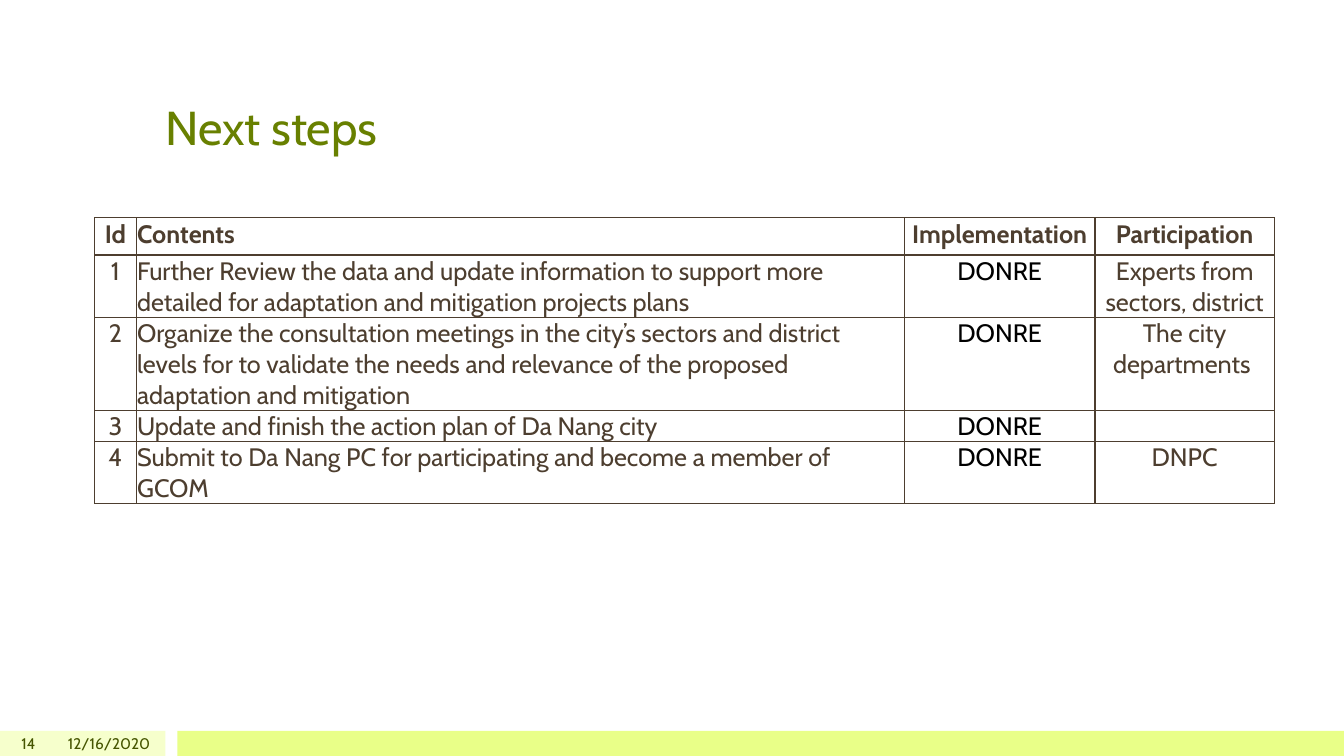
from lxml import etree
from pptx import Presentation
from pptx.dml.color import RGBColor
from pptx.enum.shapes import MSO_SHAPE
from pptx.enum.text import MSO_ANCHOR as Anchor, PP_ALIGN as Align
from pptx.oxml.ns import qn
from pptx.util import Inches, Pt

GREEN = RGBColor(0x68, 0x80, 0x00)
DARK_GREEN = RGBColor(0x45, 0x55, 0x00)
PALE_LIME = RGBColor(0xF6, 0xFF, 0xCC)
LIME = RGBColor(0xE9, 0xFF, 0x88)
BROWN = RGBColor(0x4D, 0x3E, 0x2F)
BLACK = RGBColor(0x00, 0x00, 0x00)


def write(frame, text, size, color, align, bold=False):
    frame.text = text
    frame.word_wrap = True
    paragraph = frame.paragraphs[0]
    paragraph.alignment = align
    for run in paragraph.runs:
        run.font.name = "Cabin"
        run.font.size = Pt(size)
        run.font.bold = bold
        run.font.color.rgb = color


def add_borders(cell):
    properties = cell._tc.get_or_add_tcPr()
    for position, side in enumerate(("a:lnL", "a:lnR", "a:lnT", "a:lnB")):
        line = etree.Element(qn(side), w=str(Pt(1)))
        fill = etree.SubElement(line, qn("a:solidFill"))
        etree.SubElement(fill, qn("a:srgbClr"), val=str(BROWN))
        properties.insert(position, line)


prs = Presentation()
prs.slide_width = Inches(13.33)
prs.slide_height = Inches(7.5)
slide = prs.slides.add_slide(prs.slide_layouts[6])

for left, width, color in ((0, 1.64, PALE_LIME), (1.76, 11.57, LIME)):
    band = slide.shapes.add_shape(
        MSO_SHAPE.RECTANGLE, Inches(left), Inches(7.25), Inches(width), Inches(0.25))
    band.shadow.inherit = False
    band.fill.solid()
    band.fill.fore_color.rgb = color
    band.line.fill.background()

title = slide.shapes.add_textbox(Inches(1.54), Inches(0.3), Inches(10.25), Inches(1.29))
title.text_frame.vertical_anchor = Anchor.BOTTOM
write(title.text_frame, "Next steps", 34, GREEN, Align.LEFT)

for left, width, text in ((0, 0.45, "14"), (0.5, 1.09, "12/16/2020")):
    footer = slide.shapes.add_textbox(Inches(left), Inches(7.25), Inches(width), Inches(0.25))
    footer.text_frame.vertical_anchor = Anchor.MIDDLE
    write(footer.text_frame, text, 11, DARK_GREEN, Align.RIGHT)

steps = [
    ("Id", "Contents", "Implementation", "Participation"),
    ("1", "Further Review the data and update information to support more detailed "
          "for adaptation and mitigation projects plans",
     "DONRE", "Experts from sectors, district"),
    ("2", "Organize the consultation meetings in the city’s sectors and district levels "
          "for to validate the needs and relevance of the proposed adaptation and mitigation",
     "DONRE", "The city departments "),
    ("3", "Update and finish the action plan of Da Nang city", "DONRE", ""),
    ("4", "Submit to Da Nang PC for participating and become a member of GCOM",
     "DONRE", "DNPC"),
]
column_widths = (0.41, 7.62, 1.89, 1.78)
row_heights = (0.37, 0.62, 0.92, 0.31, 0.62)

plan = slide.shapes.add_table(
    len(steps), len(column_widths), Inches(0.94), Inches(2.16),
    Inches(sum(column_widths)), Inches(sum(row_heights))).table
plan.first_row = False
plan.horz_banding = False
for column, width in zip(plan.columns, column_widths):
    column.width = Inches(width)
for row, height in zip(plan.rows, row_heights):
    row.height = Inches(height)

for r, step in enumerate(steps):
    for c, text in enumerate(step):
        cell = plan.cell(r, c)
        cell.margin_left = cell.margin_right = cell.margin_top = Inches(0.01)
        cell.margin_bottom = 0
        cell.fill.background()
        add_borders(cell)
        color = BLACK if r > 0 and c == 2 else BROWN
        align = Align.LEFT if c == 1 else Align.CENTER
        write(cell.text_frame, text, 18, color, align, bold=r == 0)

prs.save("out.pptx")
